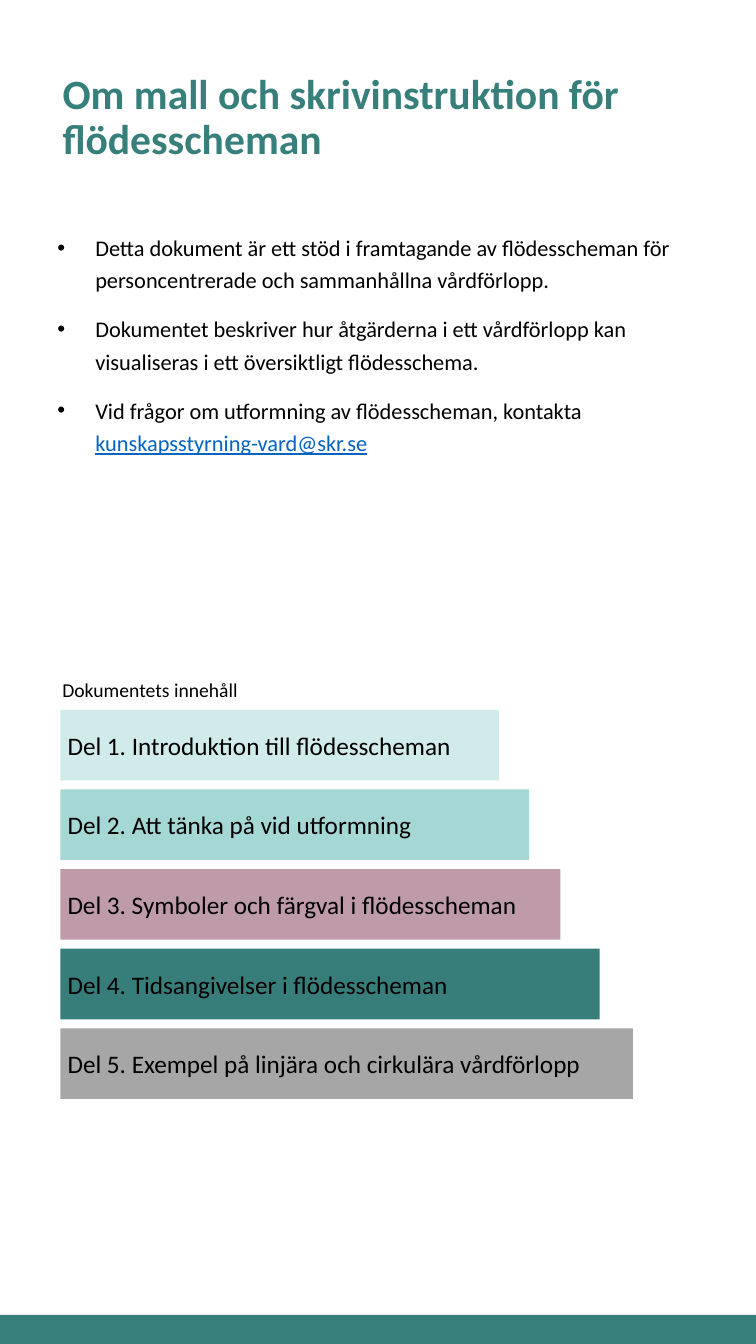
from pptx import Presentation
from pptx.dml.color import RGBColor
from pptx.enum.shapes import MSO_SHAPE
from pptx.enum.text import MSO_ANCHOR, MSO_AUTO_SIZE, PP_ALIGN
from pptx.util import Inches, Pt

RECT = MSO_SHAPE.RECTANGLE
TOP, MIDDLE = MSO_ANCHOR.TOP, MSO_ANCHOR.MIDDLE
NO_FIT = MSO_AUTO_SIZE.NONE
LEFT = PP_ALIGN.LEFT

BLACK = RGBColor(0x00, 0x00, 0x00)
LINK = RGBColor(0x05, 0x63, 0xC1)
TEAL = RGBColor(0x37, 0x7F, 0x7A)
DARK_TEAL = RGBColor(0x37, 0x7D, 0x7A)
MID_TEAL = RGBColor(0xA5, 0xD7, 0xD5)
PALE_TEAL = RGBColor(0xD1, 0xEB, 0xEA)
MAUVE = RGBColor(0xBF, 0x9B, 0xAA)
GREY = RGBColor(0xA6, 0xA6, 0xA6)

# Page grid: square cells, ten to the inch
COLS, ROWS = 75, 133.3
CELL = Inches(0.1)

BULLETS = [
    [("Detta dokument är ett stöd i framtagande av flödesscheman för "
      "personcentrerade och sammanhållna vårdförlopp.", False)],
    [("Dokumentet beskriver hur åtgärderna i ett vårdförlopp kan "
      "visualiseras i ett översiktligt flödesschema.", False)],
    [("Vid frågor om utformning av flödesscheman, kontakta ", False),
     ("kunskapsstyrning-vard@skr.se", True)],
]

# Label, width in columns, fill
PARTS = [
    ("Del 1. Introduktion till flödesscheman", 43.5, PALE_TEAL),
    ("Del 2. Att tänka på vid utformning", 46.5, MID_TEAL),
    ("Del 3. Symboler och färgval i flödesscheman", 49.6, MAUVE),
    ("Del 4. Tidsangivelser i flödesscheman", 53.5, DARK_TEAL),
    ("Del 5. Exempel på linjära och cirkulära vårdförlopp", 56.8, GREY),
]
PART_LEFT, PART_TOP, PART_HEIGHT, PART_STEP = 6, 70.4, 7, 7.9


class Page:
    """Style and current slide; positions are in grid columns and rows."""

    font = "Calibri"

    def __init__(self, prs):
        self.s = prs.slides.add_slide(prs.slide_layouts[1])

    def place(self, sp, col, row, cols, rows):
        sp.left, sp.top = int(col * CELL), int(row * CELL)
        sp.width, sp.height = int(cols * CELL), int(rows * CELL)

    def frame(self, sp, anchor):
        tf = sp.text_frame
        tf.word_wrap = True
        tf.auto_size = NO_FIT
        tf.vertical_anchor = anchor
        return tf

    def run(self, p, text, size, color=BLACK, bold=False, underline=False):
        p.alignment = LEFT
        r = p.add_run()
        r.text = text
        r.font.name = self.font
        r.font.size = Pt(size)
        r.font.bold = bold
        r.font.underline = underline
        r.font.color.rgb = color

    def title(self, text, *box):
        sp = self.s.shapes.title
        self.place(sp, *box)
        p = self.frame(sp, MIDDLE).paragraphs[0]
        p.line_spacing = 0.9
        self.run(p, text, 29.7, TEAL, bold=True)

    def bullets(self, items, *box):
        sp = self.s.placeholders[1]
        self.place(sp, *box)
        tf = self.frame(sp, TOP)
        for i, item in enumerate(items):
            p = tf.add_paragraph() if i else tf.paragraphs[0]
            p.line_spacing = 1.2
            p.space_before = Pt(12 if i else 0)
            for text, is_link in item:
                self.run(p, text, 16, LINK if is_link else BLACK,
                         underline=is_link)

    def label(self, text, size, *box):
        sp = self.s.shapes.add_textbox(0, 0, 0, 0)
        self.place(sp, *box)
        self.run(self.frame(sp, TOP).paragraphs[0], text, size)

    def bar(self, fill, *box, text=None):
        sp = self.s.shapes.add_shape(RECT, 0, 0, 0, 0)
        self.place(sp, *box)
        sp.shadow.inherit = False
        sp.fill.solid()
        sp.fill.fore_color.rgb = fill
        sp.line.fill.background()
        if text:
            tf = self.frame(sp, MIDDLE)
            tf.margin_left = Inches(0.07)
            self.run(tf.paragraphs[0], text, 18)


def main():
    prs = Presentation()
    prs.slide_width = int(COLS * CELL)
    prs.slide_height = int(ROWS * CELL)
    page = Page(prs)

    # Footer band
    page.bar(TEAL, 0, ROWS - 2.9, COLS, 2.9)

    # Heading and introduction
    page.title("Om mall och skrivinstruktion för flödesscheman",
               5.2, 7.1, 64.7, 9.3)
    page.bullets(BULLETS, 4.7, 22.2, 64.7, 41.8)

    # Contents as a staircase of bars
    page.label("Dokumentets innehåll", 14, 5.2, 66.7, 39.7, 3.4)
    for i, (text, width, fill) in enumerate(PARTS):
        page.bar(fill, PART_LEFT, PART_TOP + i * PART_STEP,
                 width, PART_HEIGHT, text=text)

    prs.save("out.pptx")


if __name__ == "__main__":
    main()
